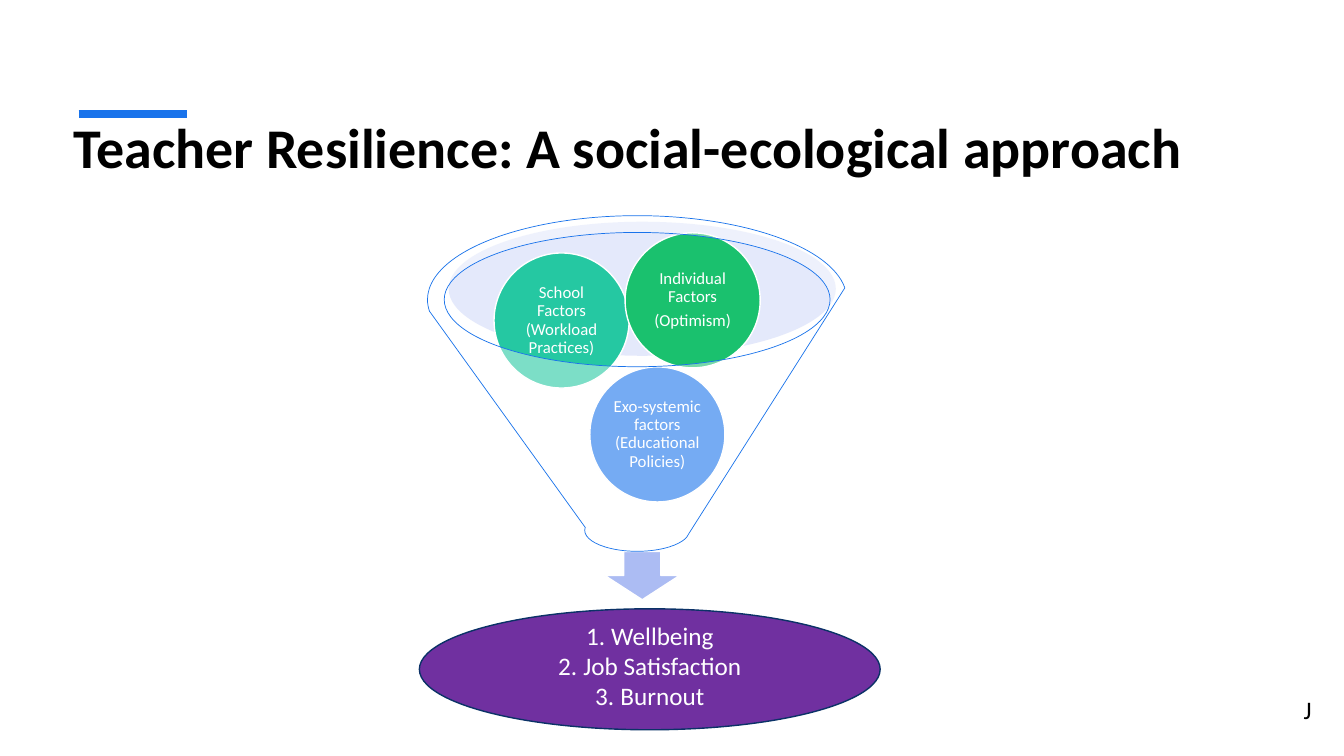
import pptx
import pptx.util
import pptx.dml.color
import pptx.enum.shapes
import pptx.enum.text
import pptx.oxml
import pptx.oxml.ns

PX = 9144  # EMU in one px, 100 px to the inch
FONT = "Calibri"
WHITE, BLUE = "FFFFFF", "1973EB"
SHAPE = pptx.enum.shapes.MSO_SHAPE
ALIGN = pptx.enum.text.PP_ALIGN
ANCHOR = pptx.enum.text.MSO_ANCHOR
Pt = pptx.util.Pt

FACTORS = [
    (585, 364, BLUE, ["Exo-systemic factors (Educational Policies)"]),
    (490, 251, "25C8A2", ["School Factors (Workload Practices)"]),
    (620, 231, "1AC16E", ["Individual Factors", "(Optimism)"]),
]
RESULTS = ["Wellbeing", "Job Satisfaction", "Burnout"]


def color(code):
    return pptx.dml.color.RGBColor.from_string(code)


def node(parent, tag, **attrs):
    item = pptx.oxml.parse_xml(f"<{tag} {pptx.oxml.ns.nsdecls('a')}/>")
    for key, value in attrs.items():
        item.set(key, str(value))
    parent.append(item)
    return item


def put(frame, lines, size, code=WHITE, bold=False, align=ALIGN.CENTER):
    """Write one paragraph per line and return the paragraphs."""
    frame.word_wrap = True
    for n, line in enumerate(lines):
        para = frame.paragraphs[0] if n == 0 else frame.add_paragraph()
        para.alignment = align
        run = para.add_run()
        run.text = line
        run.font.name = FONT
        run.font.size = Pt(size)
        run.font.bold = bold
        run.font.color.rgb = color(code)
    return frame.paragraphs


def inset(frame, side, low):
    frame.margin_left = frame.margin_right = frame.margin_top = side * PX
    frame.margin_bottom = low * PX
    frame.vertical_anchor = ANCHOR.MIDDLE


def draw(slide, kind, box, fill, line=None, width=1, alpha=None):
    shape = slide.shapes.add_shape(kind, *[v * PX for v in box])
    shape.shadow.inherit = False
    shape.fill.solid()
    shape.fill.fore_color.rgb = color(fill)
    if alpha:
        tint = shape.fill._xPr.find(".//" + pptx.oxml.ns.qn("a:srgbClr"))
        node(tint, "a:alpha", val=alpha * 1000)
    if line:
        shape.line.color.rgb = color(line)
        shape.line.width = Pt(width)
    else:
        shape.line.fill.background()
    return shape


def accent(slide):
    kind = pptx.enum.shapes.MSO_CONNECTOR.STRAIGHT
    bar = slide.shapes.add_connector(kind, 78 * PX, 113 * PX, 185 * PX, 113 * PX)
    bar.line.color.rgb = color(BLUE)
    bar.line.width = Pt(6)
    node(bar._element.spPr, "a:effectLst")


def head(slide, text):
    title = slide.shapes.title
    title.left, title.top, title.width, title.height = [
        v * PX for v in (63, 26, 1253, 157)]
    frame = title.text_frame
    frame.auto_size = pptx.enum.text.MSO_AUTO_SIZE.NONE
    frame.vertical_anchor = ANCHOR.BOTTOM
    put(frame, [text], 40, "000000", True, ALIGN.LEFT)


def label(slide, box, text):
    note = slide.shapes.add_textbox(*[v * PX for v in box])
    put(note.text_frame, [text], 18, "000000", align=ALIGN.LEFT)


def factor(slide, left, top, fill, lines):
    ball = draw(slide, SHAPE.OVAL, (left, top, 134, 134), fill, WHITE)
    inset(ball.text_frame, 2, 2)
    for para in put(ball.text_frame, lines, 12):
        para.line_spacing = 0.9
        para.space_after = Pt(4)


def funnel(slide):
    draw(slide, SHAPE.OVAL, (445, 220, 384, 133), "BDC9F5", alpha=40)
    draw(slide, SHAPE.DOWN_ARROW, (600, 547, 74, 48), "ACBCF3", WHITE)
    for item in FACTORS:
        factor(slide, *item)
    draw(slide, SHAPE.FUNNEL, (424, 214, 416, 333), WHITE, BLUE, 0.5, 40)


def outcome(slide):
    oval = draw(slide, SHAPE.OVAL, (416, 604, 457, 120), "7030A0", "0B3267")
    inset(oval.text_frame, 5, 13)
    for para in put(oval.text_frame, RESULTS, 18):
        props = para._p.get_or_add_pPr()
        props.set("marL", str(25 * PX))
        props.set("indent", str(-25 * PX))
        node(props, "a:buFont", typeface="+mj-lt")
        node(props, "a:buAutoNum", type="arabicPeriod")


def main():
    deck = pptx.Presentation()
    deck.slide_width, deck.slide_height = 1333 * PX, 750 * PX
    slide = deck.slides.add_slide(deck.slide_layouts[5])
    accent(slide)
    head(slide, "Teacher Resilience: A social-ecological approach")
    label(slide, (1283, 684, 62, 40), "J")
    funnel(slide)
    outcome(slide)
    deck.save("out.pptx")


if __name__ == "__main__":
    main()
